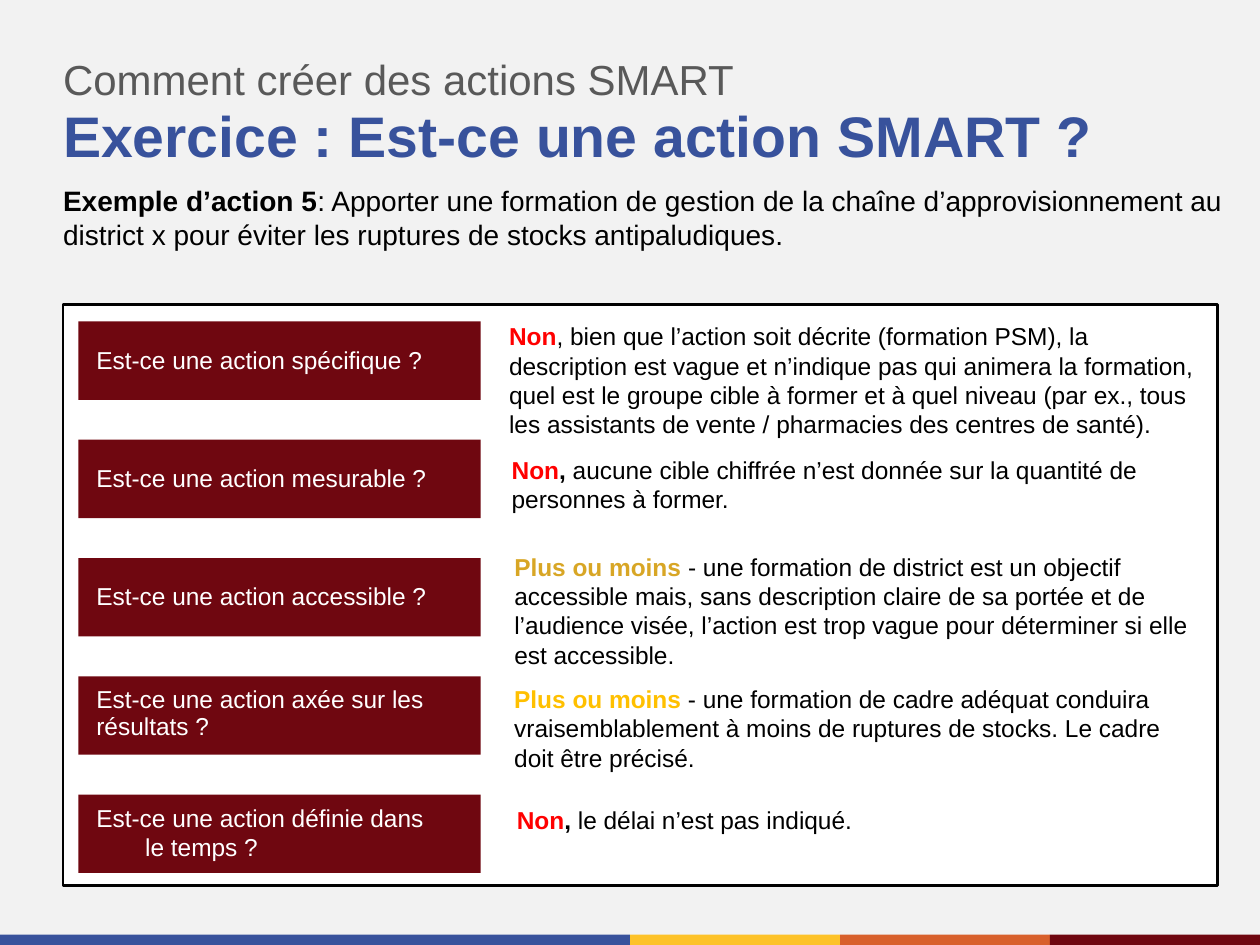
import pptx
import pptx.util
import pptx.dml.color
import pptx.enum.shapes
import pptx.enum.text
from dataclasses import dataclass

Inches = pptx.util.Inches
ANCHOR = pptx.enum.text.MSO_ANCHOR


@dataclass(frozen=True)
class Theme:
    font: str = "Arial"
    background: str = "F2F2F2"
    blue: str = "38529C"
    yellow: str = "FDC228"
    orange: str = "D8602C"
    maroon: str = "6F0710"
    grey: str = "595959"
    black: str = "000000"
    white: str = "FFFFFF"
    red: str = "FF0000"
    ochre: str = "D8A625"
    amber: str = "FFC000"
    title_size: float = 32
    subtitle_size: float = 23.5
    example_size: float = 15.7
    table_size: float = 13.7


theme = Theme()
rgb = pptx.dml.color.RGBColor.from_string


def add_block(left, top, width, height, fill):
    block = slide.shapes.add_shape(
        pptx.enum.shapes.MSO_SHAPE.RECTANGLE,
        Inches(left), Inches(top), Inches(width), Inches(height))
    block.shadow.inherit = False
    block.fill.solid()
    block.fill.fore_color.rgb = rgb(fill)
    block.line.fill.background()
    return block


def write(holder, runs, size, color, anchor=ANCHOR.TOP, spacing=None, margins=(0, 0, 0, 0)):
    frame = holder.text_frame
    frame.word_wrap = True
    frame.auto_size = pptx.enum.text.MSO_AUTO_SIZE.NONE
    frame.vertical_anchor = anchor
    frame.margin_left, frame.margin_top, frame.margin_right, frame.margin_bottom = map(Inches, margins)
    paragraph = frame.paragraphs[0]
    paragraph.alignment = pptx.enum.text.PP_ALIGN.LEFT
    if spacing:
        paragraph.line_spacing = spacing
    paragraph.font.name = theme.font
    paragraph.font.size = pptx.util.Pt(size)
    paragraph.font.color.rgb = rgb(color)
    for text, bold, run_color in runs:
        run = paragraph.add_run()
        run.text = text
        run.font.bold = bold
        if run_color != color:
            run.font.color.rgb = rgb(run_color)
    return paragraph


deck = pptx.Presentation()
deck.slide_width = Inches(9.8)
deck.slide_height = Inches(7.35)
slide = deck.slides.add_slide(deck.slide_layouts[5])
slide.background.fill.solid()
slide.background.fill.fore_color.rgb = rgb(theme.background)

stripe_unit = 9.8 / 6
stripe_left = 0
for units, color in [(3, theme.blue), (1, theme.yellow), (1, theme.orange), (1, theme.maroon)]:
    add_block(stripe_left, 7.27, units * stripe_unit, 0.08, color)
    stripe_left += units * stripe_unit

title = slide.shapes.title
title.left, title.top, title.width, title.height = map(Inches, (0.49, 0.84, 8.82, 0.48))
write(title, [("Exercice : Est-ce une action SMART ?", True, theme.blue)],
      theme.title_size, theme.blue, spacing=0.9)

subtitle = slide.shapes.add_textbox(Inches(0.49), Inches(0.46), Inches(8.82), Inches(0.36))
write(subtitle, [("Comment créer des actions SMART", False, theme.grey)],
      theme.subtitle_size, theme.grey, spacing=0.9)

example = slide.shapes.add_textbox(Inches(0.49), Inches(1.43), Inches(9.08), Inches(0.53))
write(example, [
    ("Exemple d’action 5", True, theme.black),
    (": Apporter une formation de gestion de la chaîne d’approvisionnement au district x "
     "pour éviter les ruptures de stocks antipaludiques.", False, theme.black),
], theme.example_size, theme.black)

panel = add_block(0.49, 2.37, 8.98, 4.52, theme.white)
panel.line.color.rgb = rgb(theme.black)
panel.line.width = pptx.util.Pt(1.5)

criteria = [
    ("Est-ce une action spécifique ?", None, 0, (3.96, 2.5, 5.46, 0.92), [
        ("Non", True, theme.red),
        (", bien que l’action soit décrite (formation PSM), la description est vague et "
         "n’indique pas qui animera la formation, quel est le groupe cible à former et à quel "
         "niveau (par ex., tous les assistants de vente / pharmacies des centres de santé).",
         False, theme.black)]),
    ("Est-ce une action mesurable ?", None, 0.38, (3.98, 3.54, 5.04, 0.46), [
        ("Non", True, theme.red),
        (", ", True, theme.black),
        ("aucune cible chiffrée n’est donnée sur la quantité de personnes à former.",
         False, theme.black)]),
    ("Est-ce une action accessible ?", None, 0, (4, 4.29, 5.29, 0.92), [
        ("Plus ou moins ", True, theme.ochre),
        ("- une formation de district est un objectif accessible mais, sans description claire "
         "de sa portée et de l’audience visée, l’action est trop vague pour déterminer si elle "
         "est accessible.", False, theme.black)]),
    ("Est-ce une action axée sur les résultats ?", 0.9, 0, (4, 5.32, 5.04, 0.69), [
        ("Plus ou moins ", True, theme.amber),
        ("- une formation de cadre adéquat conduira vraisemblablement à moins de ruptures de "
         "stocks. Le cadre doit être précisé.", False, theme.black)]),
    ("Est-ce une action définie dans le temps ?", None, 0.38, (4.02, 6.26, 4.92, 0.23), [
        ("Non", True, theme.red),
        (", ", True, theme.black),
        ("le délai n’est pas indiqué.", False, theme.black)]),
]
for row, (question, spacing, hanging, answer_box, answer_runs) in enumerate(criteria):
    criterion = add_block(0.61, 2.5 + row * 0.92, 3.13, 0.61, theme.maroon)
    wording = write(criterion, [(question, False, theme.white)], theme.table_size, theme.white,
                    ANCHOR.MIDDLE, spacing, margins=(0.14, 0.03, 0.25, 0.05))
    if hanging:
        indents = wording._p.get_or_add_pPr()
        indents.set("marL", str(Inches(hanging)))
        indents.set("indent", str(-Inches(hanging)))
    answer = slide.shapes.add_textbox(*map(Inches, answer_box))
    write(answer, answer_runs, theme.table_size, theme.black)

deck.save("out.pptx")
